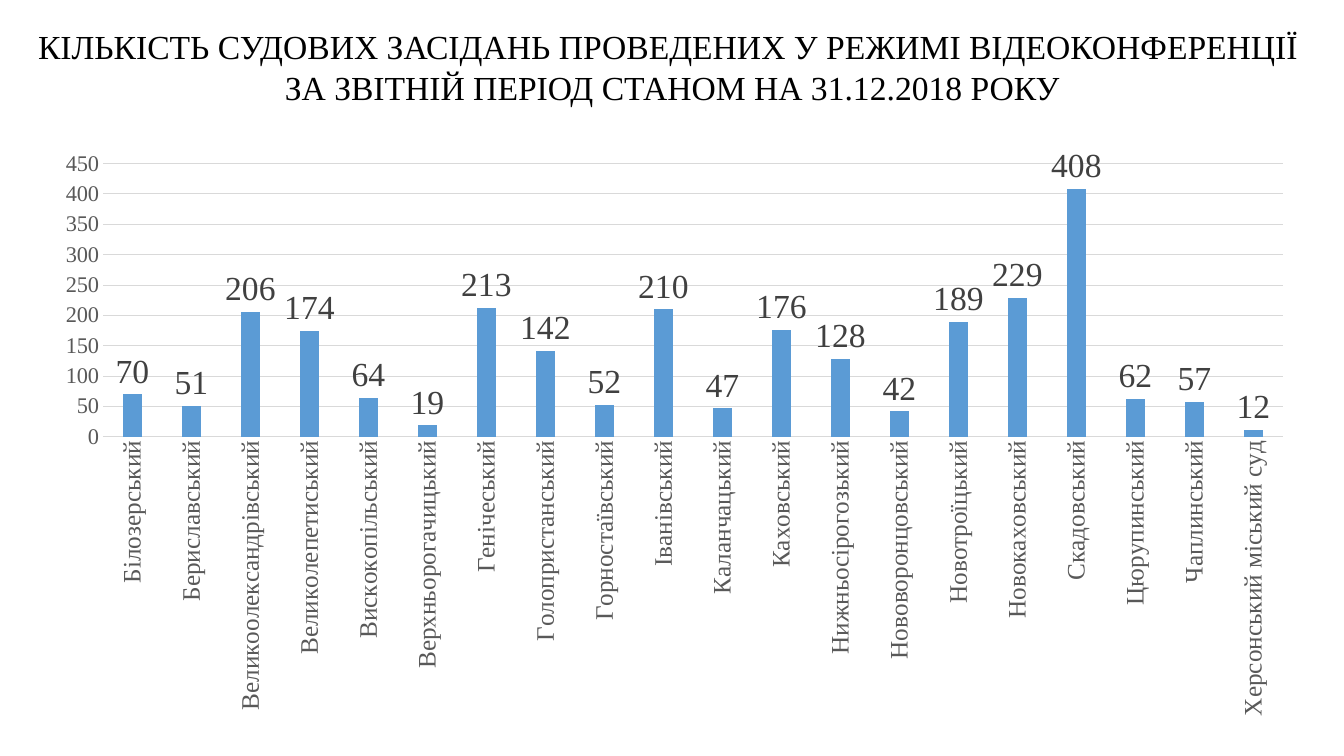
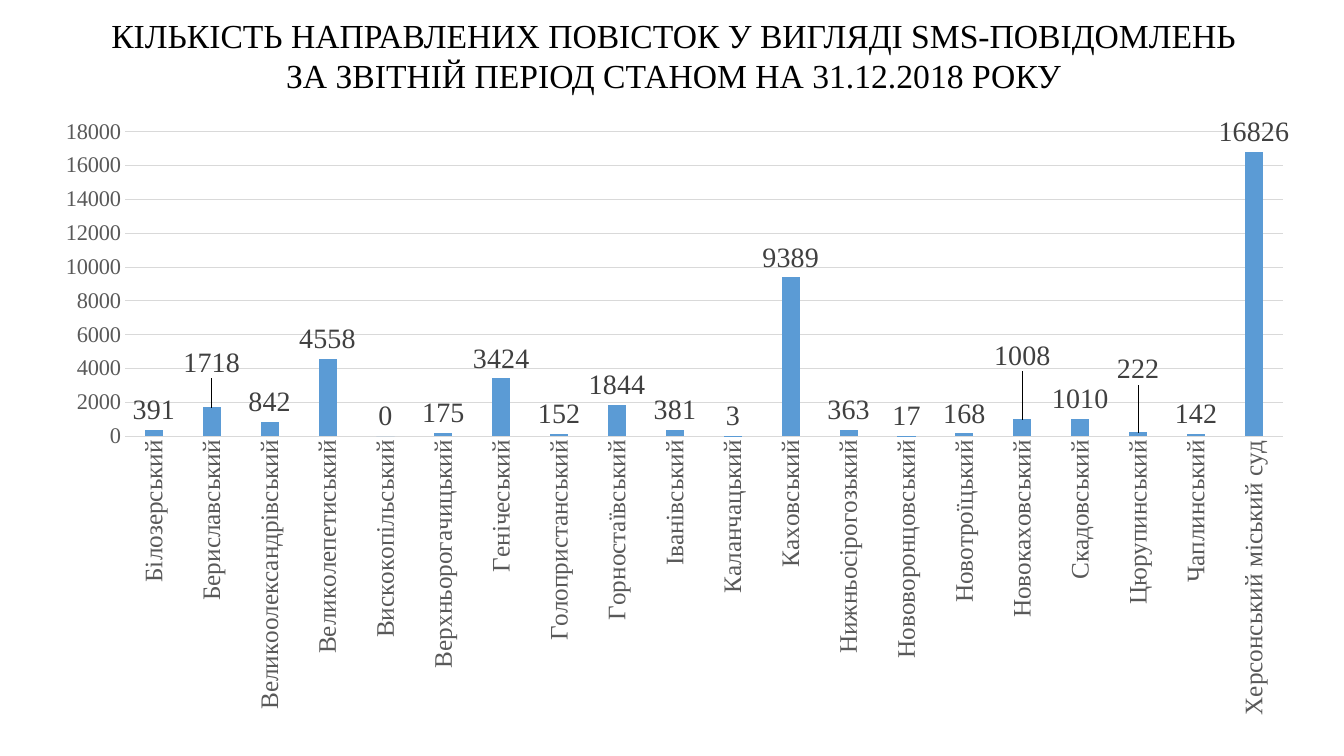
from lxml.etree import SubElement
from pptx import Presentation
from pptx.chart.data import CategoryChartData
from pptx.dml.color import RGBColor
from pptx.enum.chart import XL_CHART_TYPE, XL_LABEL_POSITION, XL_TICK_MARK
from pptx.enum.text import MSO_ANCHOR, PP_ALIGN
from pptx.oxml.ns import qn
from pptx.oxml.xmlchemy import OxmlElement
from pptx.util import Cm, Pt

COLORS = {"title": "000000", "axis": "595959", "grid": "D9D9D9",
          "bar": "5B9BD5", "label": "404040"}
SERIF = "Times New Roman"
PERIOD = "ЗА ЗВІТНІЙ ПЕРІОД СТАНОМ НА 31.12.2018 РОКУ"
COURTS = [
    "Білозерський", "Бериславський", "Великоолександрівський",
    "Великолепетиський", "Вискокопільський", "Верхньорогачицький",
    "Генічеський", "Голопристанський", "Горностаївський", "Іванівський",
    "Каланчацький", "Каховський", "Нижньосірогозький", "Нововоронцовський",
    "Новотроїцький", "Новокаховський", "Скадовський", "Цюрупинський",
    "Чаплинський", "Херсонський міський суд",
]
# Per slide: heading, title box (left, top, width), chart top,
# label size, axis top and step, values, raised labels (index: shift)
SLIDES = [
    {"head": "КІЛЬКІСТЬ СУДОВИХ ЗАСІДАНЬ ПРОВЕДЕНИХ У РЕЖИМІ ВІДЕОКОНФЕРЕНЦІЇ ",
     "box": (0.53, 0.53, 32.82), "top": 3.51, "size": 24, "scale": (450, 50),
     "vals": [70, 51, 206, 174, 64, 19, 213, 142, 52, 210,
              47, 176, 128, 42, 189, 229, 408, 62, 57, 12],
     "lift": {}},
    {"head": "КІЛЬКІСТЬ НАПРАВЛЕНИХ ПОВІСТОК У ВИГЛЯДІ SMS-ПОВІДОМЛЕНЬ",
     "box": (2.41, 0.25, 29.13), "top": 2.69, "size": 20, "scale": (18000, 2000),
     "vals": [391, 1718, 842, 4558, 0, 175, 3424, 152, 1844, 381,
              3, 9389, 363, 17, 168, 1008, 1010, 222, 142, 16826],
     "lift": {1: -0.04, 15: -0.07, 17: -0.07}},
]


def rgb(key):
    return RGBColor.from_string(COLORS[key])


def apply(item, **values):
    for name, value in values.items():
        setattr(item, name, value)


class Deck:
    def __init__(self):
        self.prs = Presentation()
        apply(self.prs, slide_width=Cm(33.87), slide_height=Cm(19.05))
        self.slide = None

    def add(self):
        self.slide = self.prs.slides.add_slide(self.prs.slide_layouts[5])

    def style(self, font, size, color):
        apply(font, name=SERIF, size=Pt(size), bold=False)
        font.color.rgb = rgb(color)

    def title(self, lines, left, top, width):
        shape = self.slide.shapes.title
        apply(shape, left=Cm(left), top=Cm(top), width=Cm(width), height=Cm(2.31))
        frame = shape.text_frame
        frame.text = "\n".join(lines)
        apply(frame, word_wrap=False, vertical_anchor=MSO_ANCHOR.TOP)
        for para in frame.paragraphs:
            para.alignment = PP_ALIGN.CENTER
            self.style(para.runs[0].font, 24, "title")

    def line(self, line):
        line.color.rgb = rgb("grid")
        line.width = Pt(0.75)

    def axes(self, chart, limit, step):
        cat, val = chart.category_axis, chart.value_axis
        for axis, size in ((cat, 18), (val, 16)):
            apply(axis, major_tick_mark=XL_TICK_MARK.NONE,
                  minor_tick_mark=XL_TICK_MARK.NONE)
            self.style(axis.tick_labels.font, size, "axis")
        apply(val, minimum_scale=0, maximum_scale=limit, major_unit=step,
              has_major_gridlines=True)
        val.format.line.fill.background()
        self.line(cat.format.line)
        self.line(val.major_gridlines.format.line)
        # Court names read upwards
        body = cat._element.find(qn("c:txPr")).find(qn("a:bodyPr"))
        body.set("rot", "-5400000")
        body.set("vert", "horz")

    def raise_label(self, point, size, shift):
        label = point.data_label
        self.style(label.font, size, "label")
        label.position = XL_LABEL_POSITION.OUTSIDE_END
        layout = OxmlElement("c:layout")
        spot = SubElement(layout, qn("c:manualLayout"))
        for axis, value in (("x", 0), ("y", shift)):
            SubElement(spot, qn("c:" + axis)).set("val", str(value))
        label._dLbl.find(qn("c:idx")).addnext(layout)

    def chart(self, vals, top, size, scale, lift):
        data = CategoryChartData()
        data.categories = COURTS
        data.add_series("Series 1", vals)
        chart = self.slide.shapes.add_chart(
            XL_CHART_TYPE.COLUMN_CLUSTERED, Cm(1.02), Cm(top),
            Cm(31.95), Cm(18.34 - top), data).chart
        apply(chart, has_title=False, has_legend=False)
        apply(chart.font, name="Calibri", size=Pt(10))
        plot = chart.plots[0]
        apply(plot, gap_width=219, overlap=-27, vary_by_categories=False)
        self.axes(chart, *scale)
        # Bars and their labels
        bars = plot.series[0]
        bars.invert_if_negative = False
        bars.format.fill.solid()
        bars.format.fill.fore_color.rgb = rgb("bar")
        labels = bars.data_labels
        apply(labels, show_value=True, position=XL_LABEL_POSITION.OUTSIDE_END)
        self.style(labels.font, size, "label")
        for index, shift in lift.items():
            self.raise_label(bars.points[index], size, shift)


def main():
    deck = Deck()
    for item in SLIDES:
        deck.add()
        deck.chart(item["vals"], item["top"], item["size"],
                   item["scale"], item["lift"])
        deck.title((item["head"], PERIOD), *item["box"])
    deck.prs.save("out.pptx")


if __name__ == "__main__":
    main()
